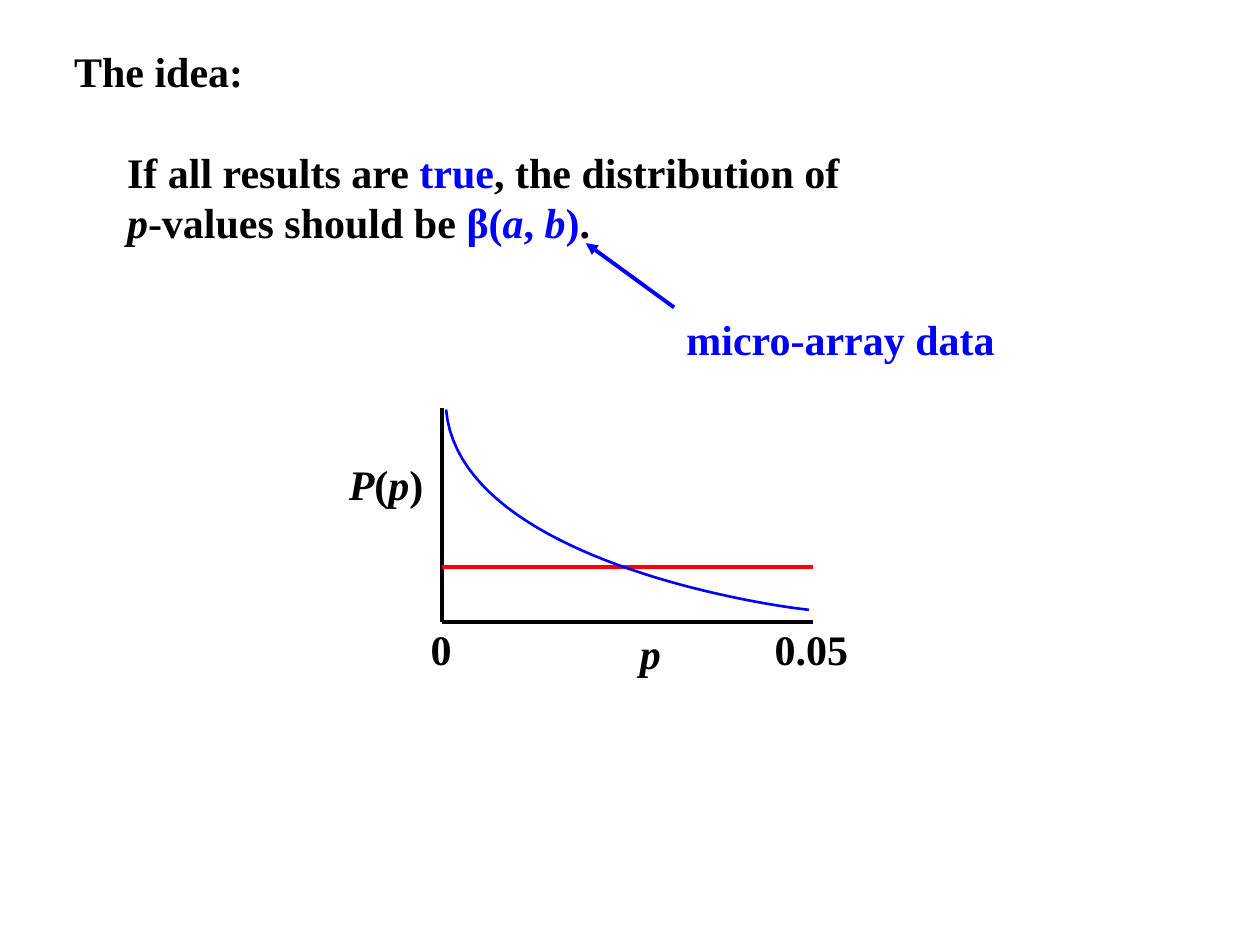
from pptx import Presentation
from pptx.dml.color import RGBColor
from pptx.enum.shapes import MSO_CONNECTOR
from pptx.oxml.ns import qn
from pptx.util import Inches, Pt
from lxml import etree

STRAIGHT = MSO_CONNECTOR.STRAIGHT
FONT = "Times New Roman"
COLORS = {"ink": "000000", "blue": "0000FF", "red": "FF0000"}


def color(name):
    return RGBColor.from_string(COLORS[name])


def add_span(para, text, ink="ink", italic=False):
    span = para.add_run()
    span.text = text
    span.font.name = FONT
    span.font.size = Pt(24)
    span.font.bold = True
    span.font.italic = italic
    span.font.color.rgb = color(ink)


def add_text(page, box, paragraphs, wrap=False):
    frame = page.shapes.add_textbox(*map(Inches, box)).text_frame
    frame.word_wrap = wrap
    for index, spans in enumerate(paragraphs):
        para = frame.add_paragraph() if index else frame.paragraphs[0]
        for text, style in spans:
            add_span(para, text, **style)
    return frame


def add_line(page, start, end, ink, arrow=False):
    line = page.shapes.add_connector(STRAIGHT, *map(Inches, start + end))
    line.line.color.rgb = color(ink)
    line.line.width = Pt(2.25)
    properties = line._element.spPr
    if arrow:
        tail = etree.SubElement(properties.find(qn("a:ln")), qn("a:tailEnd"))
        tail.set("type", "triangle")
    etree.SubElement(properties, qn("a:effectLst"))


def add_curve(page, start, controls, end):
    steps = 40
    points = []
    for step in range(steps + 1):
        t = step / steps
        weights = ((1 - t) ** 3, 3 * t * (1 - t) ** 2, 3 * t**2 * (1 - t), t**3)
        corners = (start, *controls, end)
        points.append(tuple(
            Inches(sum(w * corner[axis] for w, corner in zip(weights, corners)))
            for axis in (0, 1)
        ))
    builder = page.shapes.build_freeform(*points[0])
    builder.add_line_segments(points[1:], close=False)
    curve = builder.convert_to_shape()
    curve.shadow.inherit = False
    curve.fill.background()
    curve.line.color.rgb = color("blue")
    curve.line.width = Pt(1.5)


def add_statement(page, box):
    blue, italic = {"ink": "blue"}, {"italic": True}
    blue_italic = {**blue, **italic}
    frame = add_text(page, box, [
        [("The idea:", {})],
        [("If all results are ", {}), ("true", blue), (", the distribution of", {})],
        [("p", italic), ("-values should be ", {}), ("β(", blue), ("a", blue_italic),
         (", ", blue), ("b", blue_italic), (")", blue), (".", {})],
    ], wrap=True)
    for para in frame.paragraphs[1:]:
        para._p.get_or_add_pPr().set("marL", str(Inches(0.42)))
    frame.paragraphs[1].space_before = Pt(28.8)


def add_note(page, box):
    left, top = box[:2]
    add_text(page, box, [[("micro-array data", {"ink": "blue"})]])
    add_line(page, (left, top), (left - 0.7, top - 0.51), "blue", arrow=True)


def add_plot(page, box):
    left, top, width, height = box
    right, bottom = left + width, top + height
    italic = {"italic": True}
    add_line(page, (left, top), (left, bottom), "ink")
    add_line(page, (left, bottom), (right, bottom), "ink")
    add_line(page, (left, bottom - 0.44), (right, bottom - 0.44), "red")
    add_curve(
        page,
        (right - 0.03, bottom - 0.1),
        ((right - 0.57, bottom - 0.16), (left + 0.13, bottom - 0.55)),
        (left + 0.03, top + 0.01),
    )
    labels = [
        ((left - 0.84, top + 0.35, 0.8, 0.5),
         [("P", italic), ("(", {}), ("p", italic), (")", {})]),
        ((left + width / 2, bottom - 0.01, 0.37, 0.5), [("p", italic)]),
        ((left - 0.19, bottom - 0.04, 0.37, 0.5), [("0", {})]),
        ((right - 0.4, bottom - 0.04, 0.79, 0.5), [("0.05", {})]),
    ]
    for label_box, spans in labels:
        add_text(page, label_box, [spans])


def main():
    deck = Presentation()
    deck.slide_width, deck.slide_height = Inches(10), Inches(7.5)
    page = deck.slides.add_slide(deck.slide_layouts[6])
    add_statement(page, (0.49, 0.31, 6.33, 1.72))
    add_plot(page, (3.51, 3.24, 2.94, 1.7))
    add_note(page, (5.35, 2.44, 2.67, 0.5))
    deck.save("out.pptx")


if __name__ == "__main__":
    main()
